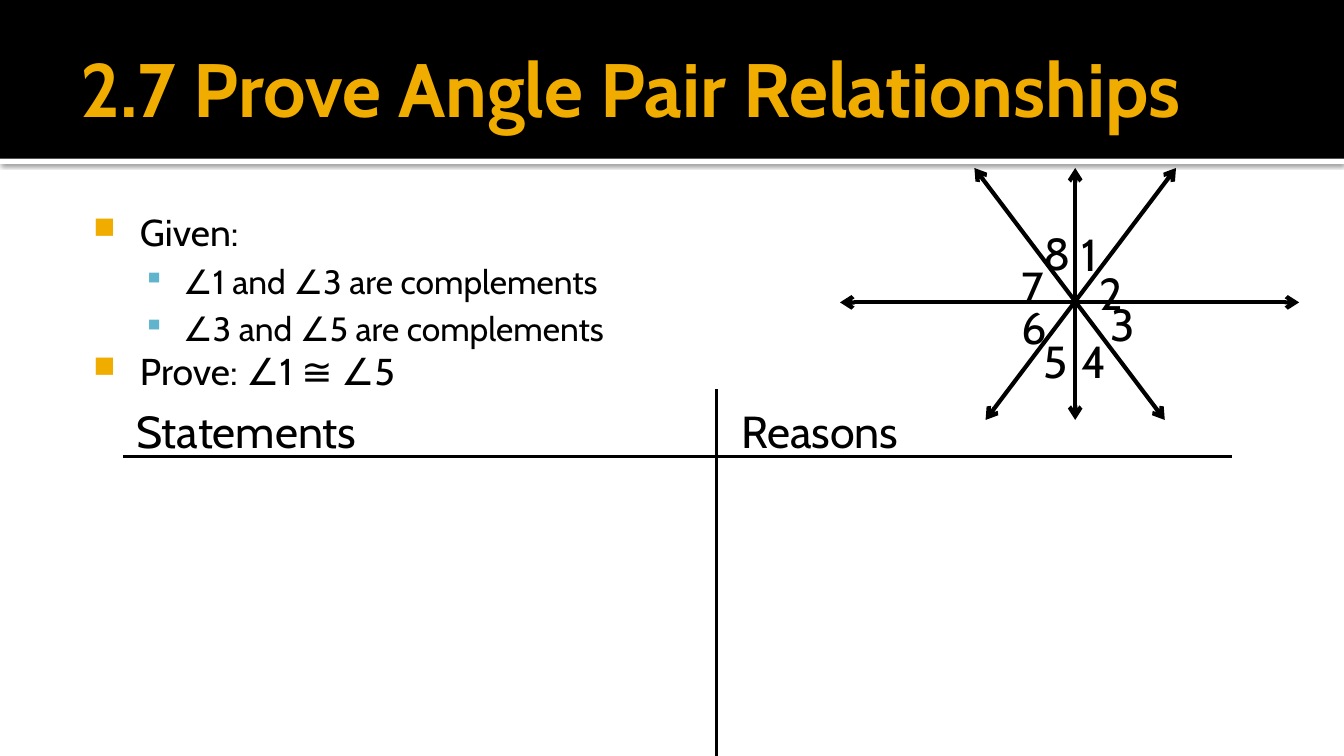
from lxml import etree
from pptx import Presentation
from pptx.dml.color import RGBColor
from pptx.enum.shapes import MSO_CONNECTOR, MSO_SHAPE
from pptx.enum.text import MSO_ANCHOR, MSO_AUTO_SIZE
from pptx.oxml import parse_xml
from pptx.oxml.ns import qn
from pptx.util import Pt

STRAIGHT = MSO_CONNECTOR.STRAIGHT
RECT = MSO_SHAPE.RECTANGLE
MIDDLE = MSO_ANCHOR.MIDDLE
FIT_TEXT = MSO_AUTO_SIZE.SHAPE_TO_FIT_TEXT

FONT = "Cabin"
COLORS = {"black": "000000", "white": "FFFFFF", "gold": "F0AD00", "blue": "60B5CC"}
NS = 'xmlns:a="http://schemas.openxmlformats.org/drawingml/2006/main"'


def add_text(shapes, x, y, w, h, lines, size, color="black", bold=False):
    sp = shapes.add_textbox(Pt(x), Pt(y), Pt(w), Pt(h))
    tf = sp.text_frame
    tf.word_wrap = True
    tf.text = "\n".join(lines)
    for p in tf.paragraphs:
        font = p.runs[0].font
        font.name, font.size, font.bold = FONT, Pt(size), bold
        font.color.rgb = RGBColor.from_string(COLORS[color])
    return tf


def add_line(shapes, x1, y1, x2, y2, width, arrows=False):
    cn = shapes.add_connector(STRAIGHT, Pt(x1), Pt(y1), Pt(x2), Pt(y2))
    cn.line.width = Pt(width)
    cn.line.color.rgb = RGBColor.from_string(COLORS["black"])
    if arrows:
        ln = cn.line._get_or_add_ln()
        for end in ("a:headEnd", "a:tailEnd"):
            etree.SubElement(ln, qn(end), type="arrow")
    etree.SubElement(cn._element.spPr, qn("a:effectLst"))


prs = Presentation()
prs.slide_width, prs.slide_height = Pt(720), Pt(405)
s = prs.slides.add_slide(prs.slide_layouts[6])

# Header band with a white, shadowed edge below it
for y, h, color in [(85, 2.75, "white"), (0, 85, "black")]:
    sp = s.shapes.add_shape(RECT, 0, Pt(y), prs.slide_width, Pt(h))
    sp.shadow.inherit = False
    sp.fill.solid()
    sp.fill.fore_color.rgb = RGBColor.from_string(COLORS[color])
    sp.line.fill.background()
    if color == "white":
        effects = sp._element.spPr.find(qn("a:effectLst"))
        effects.append(parse_xml(
            f'<a:outerShdw {NS} blurRad="{Pt(2.5)}" dist="{Pt(0.8)}" dir="5400000">'
            f'<a:srgbClr val="{COLORS["black"]}"><a:alpha val="60000"/></a:srgbClr>'
            '</a:outerShdw>'))

tf = add_text(s.shapes, 36, 9.5, 648, 74, ["2.7 Prove Angle Pair Relationships"],
              40.5, "gold", True)
tf.vertical_anchor = MIDDLE
tf.margin_right = Pt(3.6)

# Given and Prove
problem = [("Given:", 0), ("∠1 and ∠3 are complements", 1),
           ("∠3 and ∠5 are complements", 1), ("Prove: ∠1 ≅ ∠5", 0)]
# Per level: text size, left margin, indent, space before, bullet, colour, bullet size %
levels = [(20, 34.5, -25, 0, "■", "gold", 80),
          (18, 57.5, -21.5, 3.6, "▪", "blue", 90)]
tf = add_text(s.shapes, 36, 105, 648, 273, [line for line, _ in problem], 20)
tf.margin_left, tf.margin_top = Pt(4.5), Pt(7.2)
for p, (_, level) in zip(tf.paragraphs, problem):
    size, margin, indent, before, bullet, color, percent = levels[level]
    p.level = level
    p.space_before = Pt(before)
    p.runs[0].font.size = Pt(size)
    pPr = p._p.get_or_add_pPr()
    pPr.set("marL", str(Pt(margin)))
    pPr.set("indent", str(Pt(indent)))
    bu_color = etree.SubElement(pPr, qn("a:buClr"))
    etree.SubElement(bu_color, qn("a:srgbClr"), val=COLORS[color])
    etree.SubElement(pPr, qn("a:buSzPct"), val=str(percent * 1000))
    etree.SubElement(pPr, qn("a:buChar"), char=bullet)

# Two-column proof
add_line(s.shapes, 66, 244.5, 660, 244.5, 1.5)
add_line(s.shapes, 384, 208.5, 384, 405, 1.5)
for heading, x, w in [("Statements", 66, 312), ("Reasons", 390, 270)]:
    tf = add_text(s.shapes, x, 212.5, w, 36, [heading], 24)
    tf.auto_size = FIT_TEXT

# Angle diagram: four lines through one point
diagram = s.shapes.add_group_shape().shapes
top, bottom = 90, 225
for x1, y1, x2, y2 in [(450, 162, 696, 162), (576, top, 576, bottom),
                       (528, bottom, 630, top), (624, bottom, 522, top)]:
    add_line(diagram, x1, y1, x2, y2, 2.25, arrows=True)

angle_labels = {1: (572.5, 118), 2: (582, 139), 3: (588, 155.5), 4: (572.5, 175),
                5: (552, 175), 6: (540, 157), 7: (540, 135.5), 8: (552, 117.5)}
for number, (x, y) in angle_labels.items():
    tf = add_text(diagram, x, y, 54, 36, [str(number)], 24)
    tf.auto_size = FIT_TEXT

prs.save("out.pptx")
